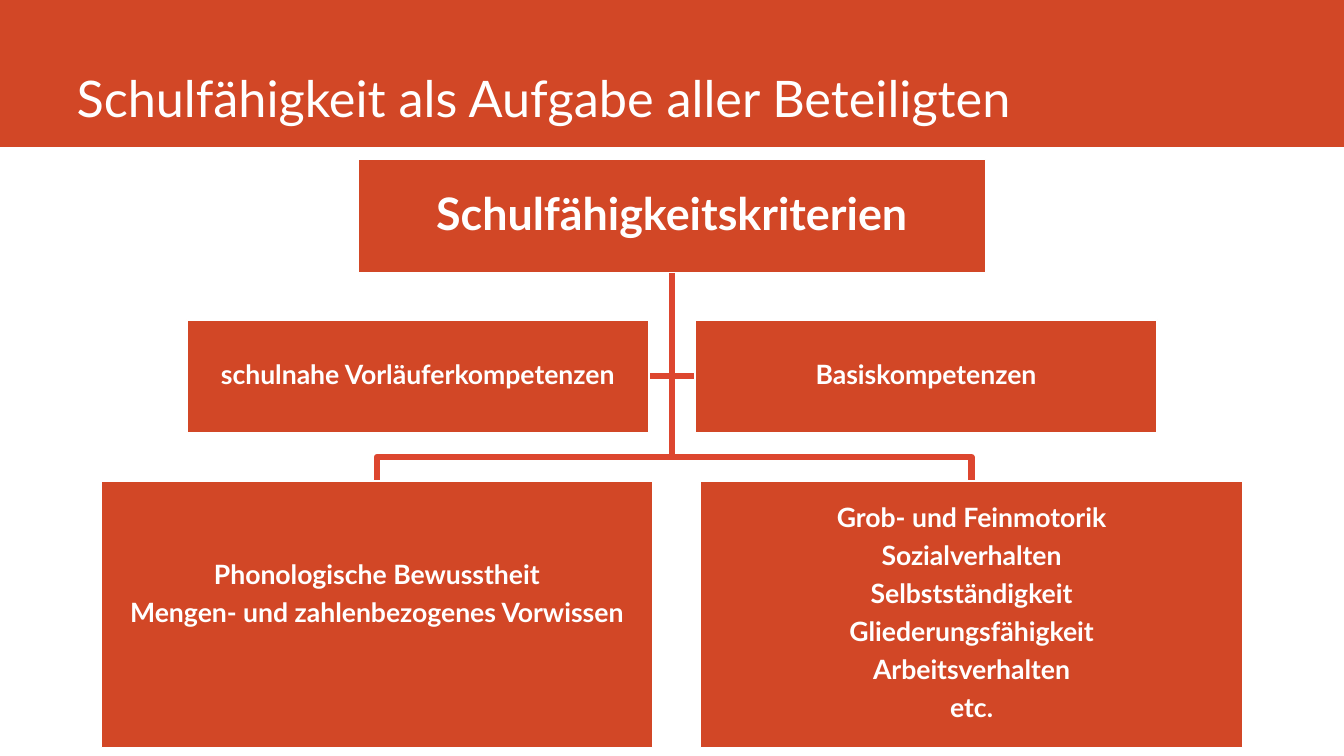
import pptx
import pptx.dml.color
import pptx.enum.shapes
import pptx.enum.text
import pptx.oxml.ns
import pptx.util
from lxml import etree

Pt = pptx.util.Pt
COLORS = {"box": "D24726", "connector": "DD462F", "white": "FFFFFF"}
FONT = "Lato"


def rgb(name):
    return pptx.dml.color.RGBColor.from_string(COLORS[name])


class Chart:
    """Draws the parts of an organisation chart on one slide, in points."""

    def __init__(self, slide):
        self.slide = slide
        self.shapes = slide.shapes

    def send_to_back(self, shape):
        self.shapes._spTree.insert(2, shape._element)

    def style_font(self, paragraph, size, bold):
        font = paragraph.font
        font.name, font.size, font.bold = FONT, Pt(size), bold
        font.color.rgb = rgb("white")

    def rectangle(self, left, top, width, height):
        shape = self.shapes.add_shape(
            pptx.enum.shapes.MSO_SHAPE.RECTANGLE, Pt(left), Pt(top), Pt(width), Pt(height))
        shape.shadow.inherit = False
        shape.fill.solid()
        shape.fill.fore_color.rgb = rgb("box")
        return shape

    def banner(self, width, height):
        shape = self.rectangle(0, 0, width, height)
        shape.line.fill.background()
        self.send_to_back(shape)

    def title(self, text, left, top, width, height):
        title = self.shapes.title
        title.left, title.top, title.width, title.height = map(Pt, (left, top, width, height))
        frame = title.text_frame
        frame.text = text
        frame.vertical_anchor = pptx.enum.text.MSO_ANCHOR.BOTTOM
        frame.paragraphs[0].alignment = pptx.enum.text.PP_ALIGN.LEFT
        self.style_font(frame.paragraphs[0], 36, False)

    def box(self, lines, left, top, width, height, size=19, bottom_margin=1):
        shape = self.rectangle(left, top, width, height)
        shape.line.color.rgb = rgb("white")
        shape.line.width = Pt(1)
        frame = shape.text_frame
        frame.word_wrap = True
        frame.vertical_anchor = pptx.enum.text.MSO_ANCHOR.MIDDLE
        frame.margin_left = frame.margin_right = frame.margin_top = Pt(1)
        frame.margin_bottom = Pt(bottom_margin)
        frame.text = "\n".join(lines)
        for paragraph in frame.paragraphs:
            paragraph.alignment = pptx.enum.text.PP_ALIGN.CENTER
            paragraph.line_spacing = 0.9
            paragraph.space_after = Pt(0.35 * size)
            self.style_font(paragraph, size, True)
        return shape

    def style_line(self, shape):
        shape.line.color.rgb = rgb("connector")
        shape.line.width = Pt(4.5)
        self.send_to_back(shape)

    def connector(self, start, end, begin=None, finish=None):
        line = self.shapes.add_connector(
            pptx.enum.shapes.MSO_CONNECTOR.STRAIGHT, *map(Pt, start + end))
        if begin:
            line.begin_connect(*begin)
        if finish:
            line.end_connect(*finish)
        self.style_line(line)
        etree.SubElement(line._element.spPr, pptx.oxml.ns.qn("a:effectLst"))

    def bracket(self, left, right, top, bottom):
        builder = self.shapes.build_freeform(Pt(left), Pt(bottom))
        corners = [(left, top), (right, top), (right, bottom)]
        builder.add_line_segments([(Pt(x), Pt(y)) for x, y in corners], close=False)
        shape = builder.convert_to_shape()
        shape.shadow.inherit = False
        shape.fill.background()
        self.style_line(shape)


def main():
    presentation = pptx.Presentation()
    presentation.slide_width, presentation.slide_height = Pt(960), Pt(540)
    chart = Chart(presentation.slides.add_slide(presentation.slide_layouts[5]))

    # Title
    chart.title("Schulfähigkeit als Aufgabe aller Beteiligten", 47.5, 0, 847, 95)

    # Boxes, level by level
    center, row_height = 480, 80.5
    middle_top, bottom_top, bottom_height = 228.5, 343.5, 190.5
    middle_width, gap = 330, 33
    root = chart.box(["Schulfähigkeitskriterien"],
                     center - 224, 114, 448, row_height, size=32)
    precursors = chart.box(["schulnahe Vorläuferkompetenzen"],
                           center - gap / 2 - middle_width, middle_top, middle_width, row_height)
    basics = chart.box(["Basiskompetenzen"],
                       center + gap / 2, middle_top, middle_width, row_height)
    # The wider bottom margin lifts the two lines above the centre
    chart.box(["Phonologische Bewusstheit", "Mengen- und zahlenbezogenes Vorwissen"],
              72.5, bottom_top, 393.5, bottom_height, bottom_margin=28)
    chart.box(["Grob- und Feinmotorik", "Sozialverhalten", "Selbstständigkeit",
               "Gliederungsfähigkeit", "Arbeitsverhalten", "etc."],
              500.5, bottom_top, 387, bottom_height)

    # Connectors behind the boxes
    branch = 326.5
    middle = middle_top + row_height / 2
    chart.connector((center, 114 + row_height), (center, branch), begin=(root, 2))
    chart.connector((center - gap / 2, middle), (center + gap / 2, middle),
                    begin=(precursors, 3), finish=(basics, 1))
    chart.bracket(72.5 + 393.5 / 2, 500.5 + 387 / 2, branch, bottom_top)

    # Banner behind everything
    chart.banner(960, 105)

    presentation.save("out.pptx")


if __name__ == "__main__":
    main()
